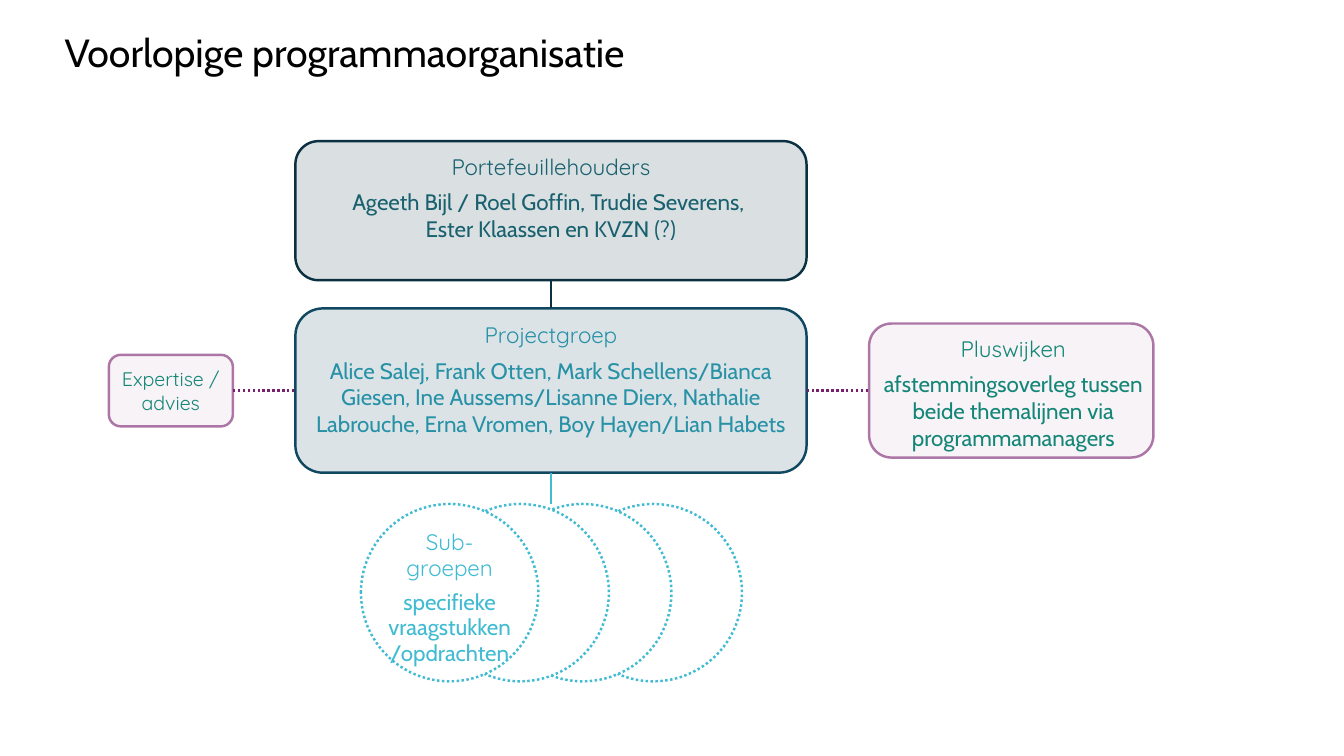
from dataclasses import dataclass
from typing import Any, Optional

from lxml.etree import SubElement
from pptx import Presentation
from pptx.dml.color import RGBColor
from pptx.enum.dml import MSO_LINE
from pptx.enum.shapes import MSO_CONNECTOR as Conn, MSO_SHAPE as Geo
from pptx.enum.text import MSO_ANCHOR as Anchor, MSO_AUTO_SIZE as AutoSize, PP_ALIGN as Align
from pptx.oxml.ns import qn
from pptx.util import Inches, Pt

WIDTH, HEIGHT = Inches(13.33), Inches(7.5)
COLS, ROWS = 133.3, 75
TOP, LEFT, BOTTOM, RIGHT = range(4)


@dataclass(frozen=True)
class Theme:
    black: str = "000000"
    white: str = "FFFFFF"
    navy: str = "0B3041"
    blue: str = "104862"
    purple: str = "78206E"
    cyan: str = "40BBD2"
    petrol: str = "1A616F"
    teal: str = "2791A6"
    green: str = "138677"
    head_font: str = "Quicksand"
    body_font: str = "Cabin"
    title_size: float = 28
    text_size: float = 16
    small_size: float = 14
    line_width: float = 1.75


@dataclass(frozen=True)
class Box:
    col: float
    row: float
    cols: float
    rows: float
    colour: str
    text_colour: str
    head: str
    body: str = ""
    size: float = 16
    fill_alpha: int = 15
    line_alpha: int = 100
    insets: tuple[float, float, float, float] = (1, 0.5, 1, 0.5)
    anchor: Anchor = Anchor.TOP


@dataclass(frozen=True)
class Link:
    start: str
    start_side: int
    end: str
    end_side: int
    colour: str
    kind: Conn = Conn.STRAIGHT
    dash: Optional[MSO_LINE] = None


T = Theme()
PINK = dict(colour=T.purple, text_colour=T.green, fill_alpha=5, line_alpha=60)
BOXES = {
    "holders": Box(29.3, 14, 50.7, 13.8, T.navy, T.petrol, "Portefeuillehouders",
                   "Ageeth Bijl / Roel Goffin, Trudie Severens, \nEster Klaassen en KVZN (?)"),
    "project": Box(29.3, 30.6, 50.7, 16.3, T.blue, T.teal, "Projectgroep",
                   "Alice Salej, Frank Otten, Mark Schellens/Bianca Giesen, "
                   "Ine Aussems/Lisanne Dierx, Nathalie Labrouche, "
                   "Erna Vromen, Boy Hayen/Lian Habets"),
    "districts": Box(86.2, 32.1, 28.2, 13.3, head="Pluswijken",
                     body="afstemmingsoverleg tussen beide themalijnen via programmamanagers",
                     insets=(0.4, 0.5, 0, 0.5), **PINK),
    "advice": Box(10.8, 35.2, 12.3, 7.1, head="Expertise /\nadvies", size=T.small_size,
                  insets=(0.4, 0.5, 0.4, 0.5), anchor=Anchor.MIDDLE, **PINK),
}
LINKS = [
    Link("holders", BOTTOM, "project", TOP, T.navy),
    Link("project", RIGHT, "districts", LEFT, T.purple, Conn.ELBOW, MSO_LINE.ROUND_DOT),
    Link("advice", RIGHT, "project", LEFT, T.purple, dash=MSO_LINE.ROUND_DOT),
]
CIRCLE_COLS = (56, 49, 42.8, 35.8)
CIRCLE_ROW, CIRCLE_SIZE = 50, 17.6


def x(cols: float) -> int:
    return round(WIDTH * cols / COLS)


def y(rows: float) -> int:
    return round(HEIGHT * rows / ROWS)


def assign(target: Any, values: dict[str, Any]) -> None:
    for name, value in values.items():
        setattr(target, name, value)


def paint(fill: Any, colour: str, alpha: int = 100) -> None:
    fill.solid()
    fill.fore_color.rgb = RGBColor.from_string(colour)
    if alpha < 100:
        for clr in fill._xPr.iter(qn("a:srgbClr")):
            if clr.getparent().getparent() is fill._xPr:
                SubElement(clr, qn("a:alpha"), val=str(alpha * 1000))


def stroke(line: Any, colour: str, alpha: int = 100, dash: Optional[MSO_LINE] = None) -> None:
    paint(line.fill, colour, alpha)
    assign(line, {"width": Pt(T.line_width), "dash_style": dash})


def frame(tf: Any, insets: tuple[float, ...], anchor: Anchor = Anchor.TOP) -> None:
    left, top, right, bottom = insets
    assign(tf, {"margin_left": x(left), "margin_top": y(top), "margin_right": x(right),
                "margin_bottom": y(bottom), "vertical_anchor": anchor, "word_wrap": True})


def write(p: Any, text: str, font: str, size: float, colour: str, **layout: Any) -> None:
    p.text = text
    assign(p, {"alignment": Align.CENTER, **layout})
    for r in p.runs:
        assign(r.font, {"name": font, "size": Pt(size), "bold": False})
        r.font.color.rgb = RGBColor.from_string(colour)


def draw_box(shapes: Any, box: Box) -> Any:
    sp = shapes.add_shape(Geo.ROUNDED_RECTANGLE, x(box.col), y(box.row), x(box.cols), y(box.rows))
    sp.shadow.inherit = False
    paint(sp.fill, box.colour, box.fill_alpha)
    stroke(sp.line, box.colour, box.line_alpha)
    tf = sp.text_frame
    frame(tf, box.insets, box.anchor)
    write(tf.paragraphs[0], box.head, T.head_font, box.size, box.text_colour, space_after=Pt(6))
    if box.body:
        write(tf.add_paragraph(), box.body, T.body_font, box.size, box.text_colour)
    return sp


def draw_connector(shapes: Any, kind: Conn, colour: str, dash: Optional[MSO_LINE] = None,
                   ends: tuple[int, int, int, int] = (0, 0, 0, 0)) -> Any:
    cx = shapes.add_connector(kind, *ends)
    stroke(cx.line, colour, dash=dash)
    SubElement(cx._element.spPr, qn("a:effectLst"))
    return cx


def draw_link(shapes: Any, link: Link, boxes: dict[str, Any]) -> None:
    cx = draw_connector(shapes, link.kind, link.colour, link.dash)
    cx.begin_connect(boxes[link.start], link.start_side)
    cx.end_connect(boxes[link.end], link.end_side)


def draw_circles(shapes: Any) -> None:
    group = shapes.add_group_shape()
    for col in CIRCLE_COLS:
        sp = group.shapes.add_shape(Geo.OVAL, x(col), y(CIRCLE_ROW), x(CIRCLE_SIZE), y(CIRCLE_SIZE))
        sp.shadow.inherit = False
        paint(sp.fill, T.white)
        stroke(sp.line, T.cyan, dash=MSO_LINE.ROUND_DOT)
    tf = sp.text_frame
    frame(tf, (0, 0, 0, 0))
    write(tf.paragraphs[0], "Sub-groepen", T.head_font, T.text_size, T.cyan,
          line_spacing=Pt(18.2), space_after=Pt(6))
    write(tf.add_paragraph(), "specifieke vraagstukken/opdrachten", T.body_font, T.text_size,
          T.cyan, line_spacing=Pt(18.2), space_after=Pt(12))


def draw_title(title: Any) -> None:
    assign(title, {"left": x(5.4), "top": y(2.3), "width": x(89.8), "height": y(5.7)})
    tf = title.text_frame
    frame(tf, (1, 0.5, 1, 0.5))
    tf.auto_size = AutoSize.SHAPE_TO_FIT_TEXT
    write(tf.paragraphs[0], "Voorlopige programmaorganisatie", T.body_font, T.title_size,
          T.black, alignment=Align.LEFT, space_after=Pt(6))


def main() -> None:
    prs = Presentation()
    assign(prs, {"slide_width": WIDTH, "slide_height": HEIGHT})
    s = prs.slides.add_slide(prs.slide_layouts[5])
    draw_title(s.shapes.title)
    boxes = {name: draw_box(s.shapes, box) for name, box in BOXES.items()}
    for link in LINKS:
        draw_link(s.shapes, link, boxes)
    project = boxes["project"]
    middle = project.left + project.width // 2
    stem = draw_connector(s.shapes, Conn.STRAIGHT, T.cyan,
                          ends=(middle, project.top + project.height, middle, y(CIRCLE_ROW)))
    stem.begin_connect(project, BOTTOM)
    draw_circles(s.shapes)
    prs.save("out.pptx")


if __name__ == "__main__":
    main()
